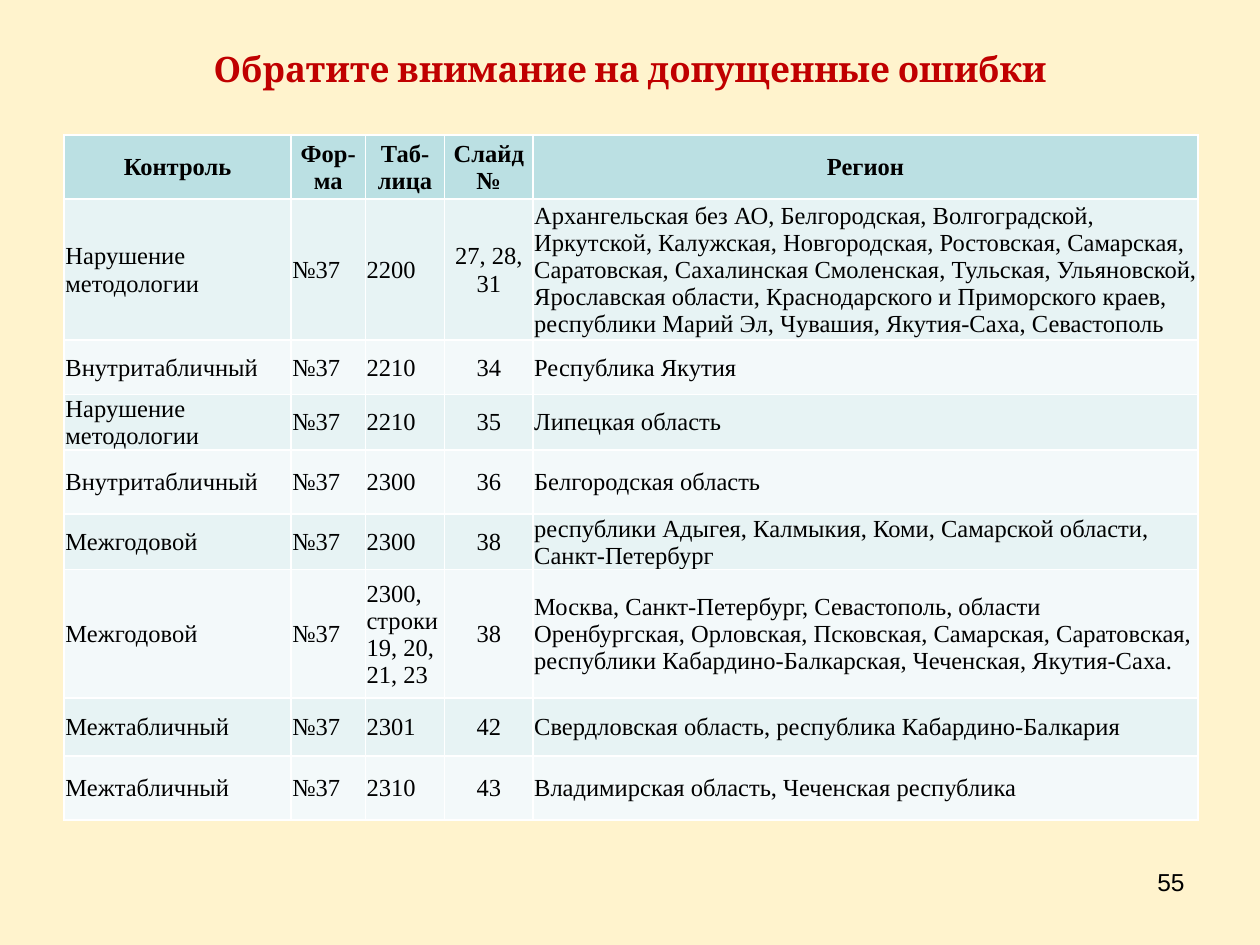
from pptx import Presentation
from pptx.dml.color import RGBColor
from pptx.enum.text import MSO_ANCHOR, PP_ALIGN
from pptx.util import Inches, Pt

LEFT, CENTER, RIGHT = PP_ALIGN.LEFT, PP_ALIGN.CENTER, PP_ALIGN.RIGHT
MIDDLE = MSO_ANCHOR.MIDDLE

COLORS = {
    "back": "FFF3CD",
    "title": "C00000",
    "text": "000000",
    "head": "BBE0E3",
    "odd": "E7F3F4",
    "even": "F3F9FA",
}
WIDTHS = [1.8, 0.59, 0.63, 0.7, 5.28]
HEIGHTS = [0.51, 1.12, 0.43, 0.43, 0.51, 0.43, 1.02, 0.46, 0.51]
ALIGNS = [LEFT, LEFT, LEFT, CENTER, LEFT]
ROWS = [
    ["Контроль", "Фор-ма", "Таб-лица", "Слайд №", "Регион"],
    ["Нарушение методологии", "№37", "2200", "27, 28, 31",
     "Архангельская без АО, Белгородская, Волгоградской, Иркутской, "
     "Калужская, Новгородская, Ростовская, Самарская, Саратовская, "
     "Сахалинская Смоленская, Тульская, Ульяновской, Ярославская области, "
     "Краснодарского и Приморского краев, республики Марий Эл, Чувашия, "
     "Якутия-Саха, Севастополь"],
    ["Внутритабличный", "№37", "2210", "34", "Республика Якутия"],
    ["Нарушение методологии", "№37", "2210", "35", "Липецкая область"],
    ["Внутритабличный", "№37", "2300", "36", "Белгородская область"],
    ["Межгодовой", "№37", "2300", "38",
     "республики Адыгея, Калмыкия, Коми, Самарской области, Санкт-Петербург"],
    ["Межгодовой", "№37", "2300, строки 19, 20, 21, 23", "38",
     "Москва, Санкт-Петербург, Севастополь, области Оренбургская, Орловская, "
     "Псковская, Самарская, Саратовская, республики Кабардино-Балкарская, "
     "Чеченская, Якутия-Саха."],
    ["Межтабличный", "№37", "2301", "42",
     "Свердловская область, республика Кабардино-Балкария"],
    ["Межтабличный", "№37", "2310", "43",
     "Владимирская область, Чеченская республика"],
]


def write(frame, text, size=14, font="Times New Roman", color="text",
          bold=False, align=LEFT):
    frame.word_wrap = True
    para = frame.paragraphs[0]
    para.alignment = align
    run = para.add_run()
    run.text = text
    run.font.size = Pt(size)
    run.font.name = font
    run.font.bold = bold
    run.font.color.rgb = RGBColor.from_string(COLORS[color])


deck = Presentation()
deck.slide_width, deck.slide_height = Inches(10), Inches(7.5)
slide = deck.slides.add_slide(deck.slide_layouts[5])
back = slide.background.fill
back.solid()
back.fore_color.rgb = RGBColor.from_string(COLORS["back"])

# Title
title = slide.shapes.title
title.left, title.top = Inches(0.5), Inches(0.3)
title.width, title.height = Inches(9), Inches(0.48)
title.text_frame.vertical_anchor = MIDDLE
write(title.text_frame, ROWS and "Обратите внимание на допущенные ошибки",
      size=20, font="Cambria", color="title", bold=True, align=CENTER)

# Table of errors; the default table style draws the white borders
table = slide.shapes.add_table(
    len(ROWS), len(WIDTHS), Inches(0.51), Inches(1.07),
    Inches(sum(WIDTHS)), Inches(sum(HEIGHTS))).table
for column, width in zip(table.columns, WIDTHS):
    column.width = Inches(width)
for r, (row, height) in enumerate(zip(ROWS, HEIGHTS)):
    table.rows[r].height = Inches(height)
    head = r == 0
    shade = "head" if head else "odd" if r % 2 else "even"
    for c, text in enumerate(row):
        cell = table.cell(r, c)
        cell.fill.solid()
        cell.fill.fore_color.rgb = RGBColor.from_string(COLORS[shade])
        cell.vertical_anchor = MIDDLE
        cell.margin_left = cell.margin_right = cell.margin_top = Inches(0.01)
        cell.margin_bottom = 0
        write(cell.text_frame, text, bold=head,
              align=CENTER if head else ALIGNS[c])

# Page number
page = slide.shapes.add_textbox(
    Inches(7.17), Inches(6.83), Inches(2.33), Inches(0.52))
write(page.text_frame, "55", font="Arial", align=RIGHT)

deck.save("out.pptx")
